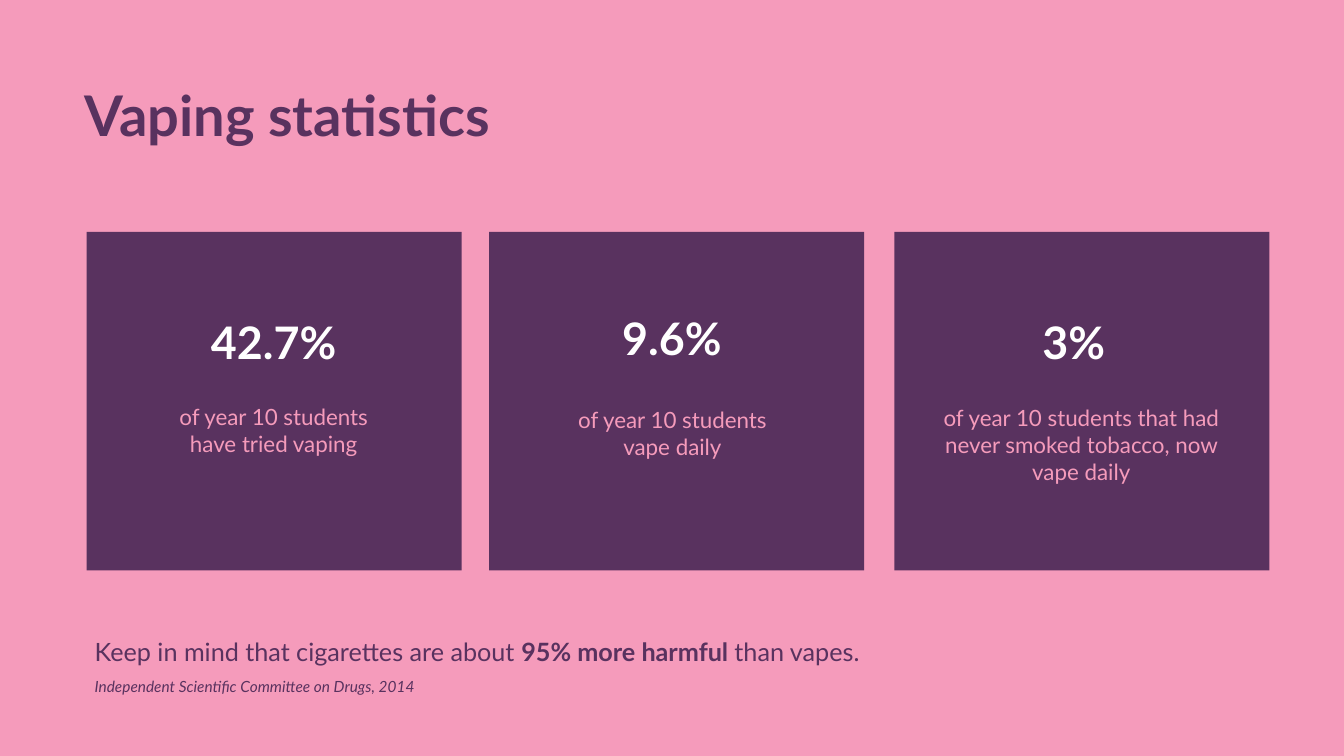
from dataclasses import dataclass

from pptx import Presentation
from pptx.dml.color import RGBColor
from pptx.enum.shapes import MSO_SHAPE as Shape
from pptx.enum.text import MSO_ANCHOR as Anchor, MSO_AUTO_SIZE as AutoSize, PP_ALIGN as Align
from pptx.util import Inches, Pt


@dataclass(frozen=True)
class Theme:
    font: str = "Lato"
    pink: str = "F59BBB"
    purple: str = "59325F"
    white: str = "FFFFFF"
    title: int = 40
    figure: int = 32
    note: int = 18
    caption: int = 16
    source: int = 11


class SlideBuilder:
    def __init__(self, presentation, theme):
        self.theme = theme
        self.slide = presentation.slides.add_slide(presentation.slide_layouts[5])
        self.paint(self.slide.background.fill, theme.pink)

    def paint(self, fill, color):
        fill.solid()
        fill.fore_color.rgb = RGBColor.from_string(color)

    def add_runs(self, shape, runs, size, color, align=Align.LEFT, anchor=Anchor.TOP):
        """Fill a shape with one paragraph of (text, bold, italic) runs."""
        frame = shape.text_frame
        frame.word_wrap = True
        frame.auto_size = AutoSize.NONE
        frame.vertical_anchor = anchor
        paragraph = frame.paragraphs[0]
        paragraph.alignment = align
        paragraph.space_before = Pt(0)
        for text, bold, italic in runs:
            run = paragraph.add_run()
            run.text = text
            font = run.font
            font.name, font.size = self.theme.font, Pt(size)
            font.bold, font.italic = bold, italic
            font.color.rgb = RGBColor.from_string(color)
        return paragraph

    def title(self, text, left, top, width, height):
        shape = self.slide.shapes.title
        shape.left, shape.top = Inches(left), Inches(top)
        shape.width, shape.height = Inches(width), Inches(height)
        paragraph = self.add_runs(shape, [(text, True, False)], self.theme.title,
                                  self.theme.purple)
        paragraph.line_spacing = 0.9

    def text(self, runs, left, top, width, height, size, color, **layout):
        box = self.slide.shapes.add_textbox(
            Inches(left), Inches(top), Inches(width), Inches(height))
        self.add_runs(box, runs, size, color, **layout)

    def card(self, left, top, width, height):
        shape = self.slide.shapes.add_shape(
            Shape.RECTANGLE, Inches(left), Inches(top), Inches(width), Inches(height))
        shape.shadow.inherit = False
        self.paint(shape.fill, self.theme.purple)
        shape.line.fill.background()

    def statistic(self, card_left, figure, figure_box, caption, caption_box):
        theme = self.theme
        self.card(card_left, 2.3, 3.72, 3.36)
        self.text([(figure, True, False)], *figure_box, theme.figure, theme.white,
                  align=Align.CENTER)
        self.text([(caption, False, False)], *caption_box, theme.caption, theme.pink,
                  align=Align.CENTER, anchor=Anchor.BOTTOM)


# Card left, figure and its box, caption and its box
STATISTICS = [
    (0.86, "42.7%", (1.78, 3.07, 1.87, 0.64),
     "of year 10 students have tried vaping", (1.45, 4.01, 2.53, 0.57)),
    (4.85, "9.6%", (5.8, 3.03, 1.73, 0.64),
     "of year 10 students vape daily", (5.55, 4.01, 2.24, 0.6)),
    (8.87, "3%", (9.89, 3.07, 1.52, 0.64),
     "of year 10 students that had never smoked tobacco, now vape daily",
     (9.18, 4.01, 3.09, 0.85)),
]


def main():
    presentation = Presentation()
    presentation.slide_width, presentation.slide_height = Inches(13.33), Inches(7.5)
    theme = Theme()
    builder = SlideBuilder(presentation, theme)

    # Heading
    builder.title("Vaping statistics", 0.74, 0.82, 5.32, 0.88)

    # Statistic cards
    for statistic in STATISTICS:
        builder.statistic(*statistic)

    # Closing note and its source
    note = [("Keep in mind that cigarettes are about ", False, False),
            ("95% more harmful ", True, False),
            ("than vapes.", False, False)]
    builder.text(note, 0.84, 6.32, 9.26, 0.34, theme.note, theme.purple, anchor=Anchor.BOTTOM)
    builder.text([("Independent Scientific Committee on Drugs, 2014", False, True)],
                 0.84, 6.67, 5.81, 0.41, theme.source, theme.purple)

    presentation.save("out.pptx")


if __name__ == "__main__":
    main()
